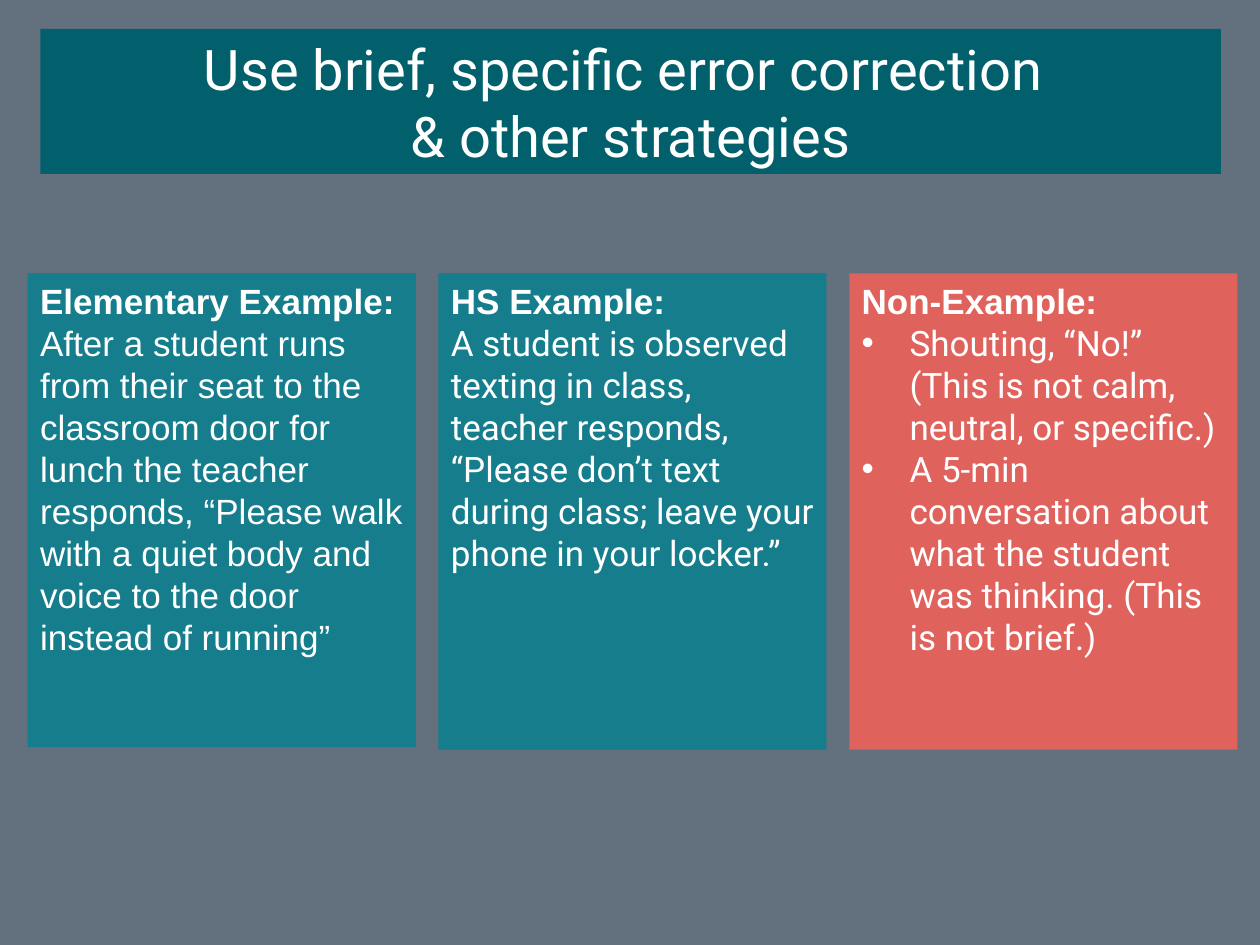
"""Build a slide of error correction examples and a non-example."""
from lxml.etree import SubElement
from pptx import Presentation
from pptx.dml.color import RGBColor
from pptx.enum.shapes import MSO_SHAPE
from pptx.enum.text import MSO_ANCHOR, PP_ALIGN
from pptx.oxml.ns import qn
from pptx.util import Inches, Pt

BACKGROUND, BANNER, TEAL, CORAL, WHITE = "63717F", "01606C", "028090", "FE5F55", "FFFFFF"
TITLE = ["Use brief, specific error correction ", "& other strategies"]
CARDS = [
    dict(heading="Elementary Example:", fill=TEAL, font="Arial", height=3.76, bulleted=False,
         body=["After a student runs from their seat to the classroom door for lunch the teacher "
               "responds, “Please walk with a quiet body and voice to the door instead of running”"]),
    dict(heading="HS Example:", fill=TEAL, font="Roboto", height=3.78, bulleted=False,
         body=["A student is observed texting in class, teacher responds, “Please don’t text "
               "during class; leave your phone in your locker.”"]),
    dict(heading="Non-Example:", fill=CORAL, font="Roboto", height=3.78, bulleted=True,
         body=["Shouting, “No!” (This is not calm, neutral, or specific.)",
               "A 5-min conversation about what the student was thinking. (This is not brief.)"]),
]
CARD_LEFT, CARD_TOP, CARD_WIDTH, CARD_STEP = 0.22, 2.17, 3.08, 3.26
BULLET_INDENT = 0.38


def color(value):
    return RGBColor.from_string(value)


def add_panel(page, left, top, width, height, fill, opacity=100, anchor=MSO_ANCHOR.TOP):
    panel = page.shapes.add_shape(MSO_SHAPE.RECTANGLE, *map(Inches, (left, top, width, height)))
    panel.shadow.inherit = False
    panel.line.fill.background()
    panel.fill.solid()
    panel.fill.fore_color.rgb = color(fill)
    if opacity < 100:
        tint = panel.fill._xPr.find(qn("a:solidFill"))[0]
        SubElement(tint, qn("a:alpha"), val=str(opacity * 1000))
    panel.text_frame.word_wrap = True
    panel.text_frame.vertical_anchor = anchor
    return panel


def add_text(frame, text, font="Arial", size=20, bold=False, align=PP_ALIGN.LEFT, bulleted=False):
    para = frame.paragraphs[0] if not frame.text else frame.add_paragraph()
    para.alignment = align
    if bulleted:
        properties = para._p.get_or_add_pPr()
        properties.set("marL", str(Inches(BULLET_INDENT)))
        properties.set("indent", str(-Inches(BULLET_INDENT)))
        SubElement(properties, qn("a:buFont"), typeface="Arial")
        SubElement(properties, qn("a:buChar"), char="•")
    span = para.add_run()
    span.text = text
    span.font.name, span.font.size, span.font.bold = font, Pt(size), bold
    span.font.color.rgb = color(WHITE)


def main():
    deck = Presentation()
    deck.slide_width, deck.slide_height = Inches(10), Inches(7.5)
    page = deck.slides.add_slide(deck.slide_layouts[6])
    page.background.fill.solid()
    page.background.fill.fore_color.rgb = color(BACKGROUND)

    frame = add_panel(page, 0.32, 0.23, 9.37, 1.15, BANNER, anchor=MSO_ANCHOR.MIDDLE).text_frame
    frame.margin_left = frame.margin_right = frame.margin_top = frame.margin_bottom = Inches(0.01)
    for line in TITLE:
        add_text(frame, line, font="Roboto", size=32, align=PP_ALIGN.CENTER)

    for column, card in enumerate(CARDS):
        panel = add_panel(page, CARD_LEFT + column * CARD_STEP, CARD_TOP, CARD_WIDTH,
                          card["height"], card["fill"], opacity=80)
        add_text(panel.text_frame, card["heading"], bold=True)
        for text in card["body"]:
            add_text(panel.text_frame, text, font=card["font"], bulleted=card["bulleted"])

    deck.save("out.pptx")


if __name__ == "__main__":
    main()
